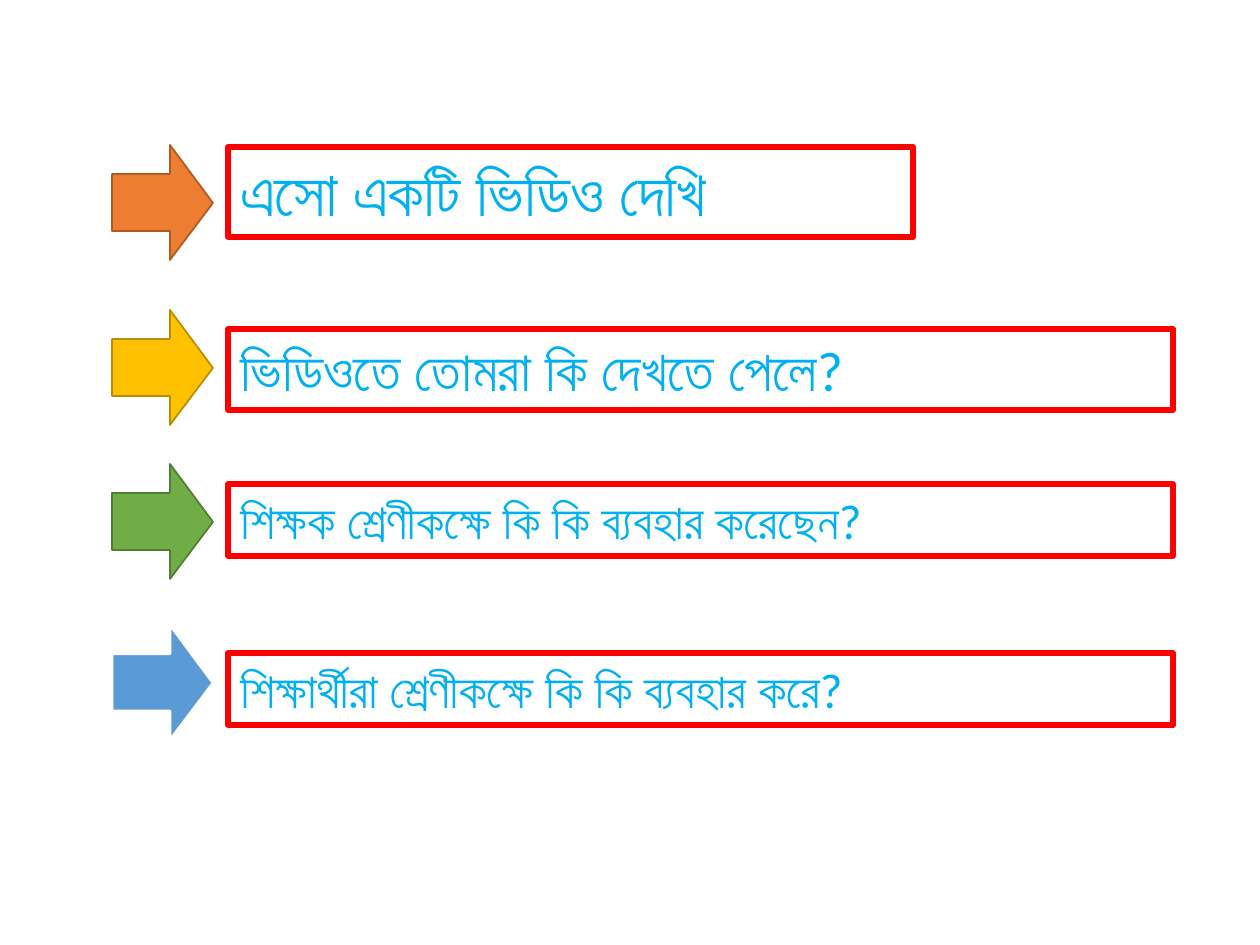
from pptx import Presentation
from pptx.dml.color import RGBColor
from pptx.enum.text import MSO_AUTO_SIZE
from pptx.util import Emu, Pt

PX = 914400 // 126
FIT_SHAPE = MSO_AUTO_SIZE.SHAPE_TO_FIT_TEXT

ARROW_LEFT, ARROW_WIDTH, ARROW_HEIGHT, SHAFT_LENGTH = 112, 101, 115, 58
BOX_LEFT = 228

# arrow top, fill, line, line width; box top, width, height; text, size
ROWS = [
    (145, "ED7D31", "AE5A21", 1, 147, 685, 90, "এসো একটি ভিডিও দেখি", 36),
    (310, "FFC000", "BC8C00", 1, 329, 945, 81, "ভিডিওতে তোমরা কি দেখতে পেলে?", 32),
    (464, "70AD47", "507E32", 1, 484, 945, 72,
     "শিক্ষক শ্রেণীকক্ষে কি কি ব্যবহার করেছেন?", 28),
    (625, "5B9BD5", "FFFFFF", 1.5, 653, 945, 72,
     "শিক্ষার্থীরা শ্রেণীকক্ষে কি কি ব্যবহার করে?", 28),
]


def px(length):
    return Emu(length * PX)


def color(hex_string):
    return RGBColor.from_string(hex_string)


class SlideBuilder:
    font = "Calibri"
    text_color = "00B0F0"
    border_color = "FF0000"
    border_width = 3.25

    def __init__(self, slide):
        self.slide = slide

    def outline(self, shape, line_color, width):
        shape.line.color.rgb = color(line_color)
        shape.line.width = Pt(width)

    def add_text(self, frame, text, size):
        span = frame.paragraphs[0].add_run()
        span.text = text
        span.font.name = self.font
        span.font.size = Pt(size)
        span.font.color.rgb = color(self.text_color)

    def arrow(self, top, fill, line, line_width):
        left, right = ARROW_LEFT, ARROW_LEFT + ARROW_WIDTH
        neck = left + SHAFT_LENGTH
        quarter, half = ARROW_HEIGHT / 4, ARROW_HEIGHT / 2
        shaft_top, shaft_bottom = top + round(quarter), top + round(3 * quarter)
        builder = self.slide.shapes.build_freeform(left, shaft_top, scale=PX)
        builder.add_line_segments([
            (neck, shaft_top), (neck, top), (right, top + round(half)),
            (neck, top + ARROW_HEIGHT), (neck, shaft_bottom), (left, shaft_bottom),
        ], close=True)
        shape = builder.convert_to_shape()
        shape.shadow.inherit = False
        shape.fill.solid()
        shape.fill.fore_color.rgb = color(fill)
        self.outline(shape, line, line_width)

    def text_box(self, top, width, height, text, size):
        box = self.slide.shapes.add_textbox(
            px(BOX_LEFT), px(top), px(width), px(height))
        self.outline(box, self.border_color, self.border_width)
        box.text_frame.word_wrap = True
        box.text_frame.auto_size = FIT_SHAPE
        self.add_text(box.text_frame, text, size=size)


def main():
    deck = Presentation()
    deck.slide_width, deck.slide_height = px(1260), px(945)
    page = SlideBuilder(deck.slides.add_slide(deck.slide_layouts[6]))
    for arrow_top, fill, line, line_width, box_top, width, height, text, size in ROWS:
        page.text_box(box_top, width, height, text, size)
        page.arrow(arrow_top, fill, line, line_width)
    deck.save("out.pptx")


if __name__ == "__main__":
    main()
